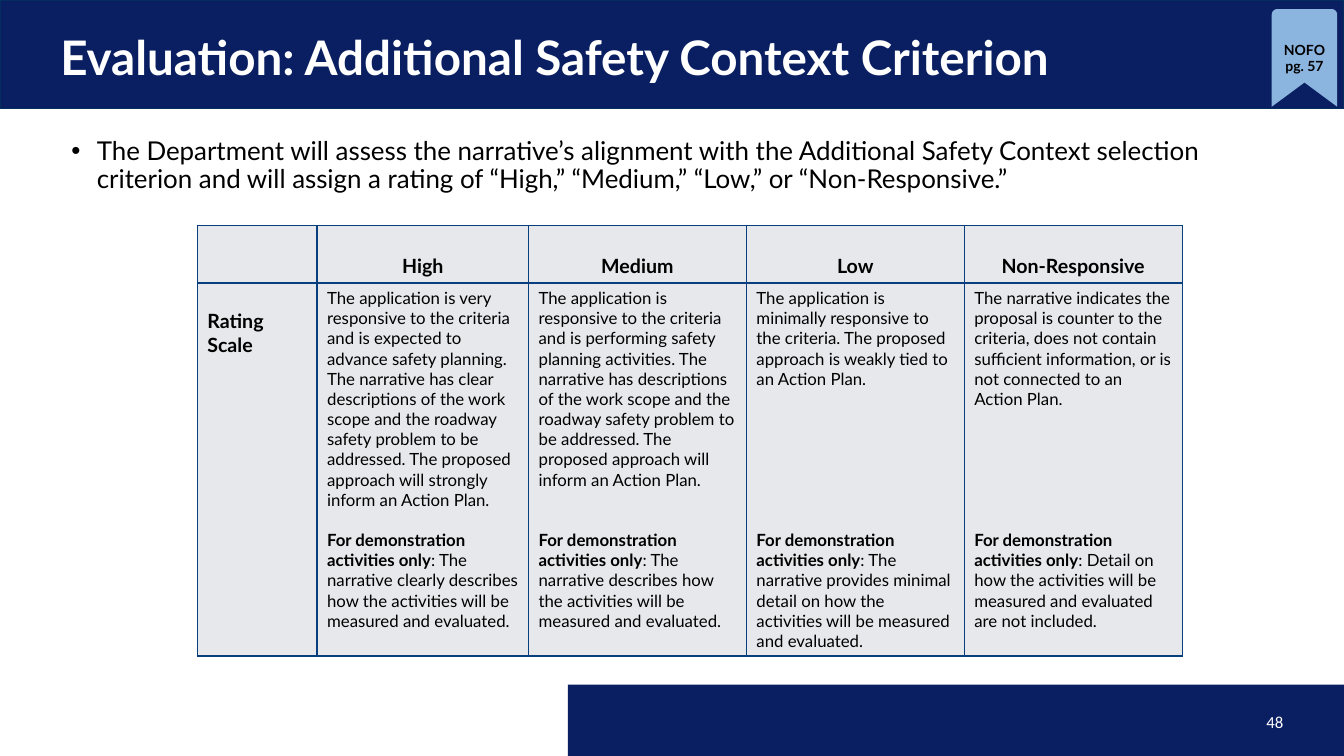
from math import cos, pi, sin

from lxml import etree
from pptx import Presentation
from pptx.dml.color import RGBColor
from pptx.enum.shapes import MSO_SHAPE
from pptx.enum.text import MSO_ANCHOR, PP_ALIGN
from pptx.oxml.ns import qn
from pptx.util import Cm, Pt

RECTANGLE = MSO_SHAPE.RECTANGLE
TOP, MIDDLE, BOTTOM = MSO_ANCHOR.TOP, MSO_ANCHOR.MIDDLE, MSO_ANCHOR.BOTTOM
LEFT, CENTER, RIGHT = PP_ALIGN.LEFT, PP_ALIGN.CENTER, PP_ALIGN.RIGHT

THEME = {
    "navy": RGBColor(0x0A, 0x1F, 0x61),
    "band_line": RGBColor(0x04, 0x2E, 0x5D),
    "ribbon": RGBColor(0x8B, 0xB4, 0xDF),
    "cell": RGBColor(0xE7, 0xE8, 0xEC),
    "border": "063E7E",
    "title": {"name": "Lato", "size": Pt(34), "bold": True},
    "lead": {"name": "Lato", "size": Pt(18.5), "bold": False},
    "heading": {"name": "Lato", "size": Pt(14), "bold": True},
    "body": {"name": "Lato", "size": Pt(12), "bold": False},
    "strong": {"name": "Lato", "size": Pt(12), "bold": True},
    "tag": {"name": "Lato", "size": Pt(10), "bold": True},
    "number": {"name": "Calibri", "size": Pt(12), "bold": False},
    "white": RGBColor(0xFF, 0xFF, 0xFF),
    "black": RGBColor(0, 0, 0),
}
BODY_LINE = 14.4  # points per line of table text


def add_run(paragraph, text, style, color="black"):
    run = paragraph.add_run()
    run.text = text
    for attribute, value in THEME[style].items():
        setattr(run.font, attribute, value)
    run.font.color.rgb = THEME[color]


presentation = Presentation()
presentation.slide_width, presentation.slide_height = Cm(33.87), Cm(19.05)
slide = presentation.slides.add_slide(presentation.slide_layouts[6])

# Navy bands
header_band = slide.shapes.add_shape(RECTANGLE, 0, 0, Cm(33.87), Cm(2.74))
footer_band = slide.shapes.add_shape(RECTANGLE, Cm(14.31), Cm(17.25), Cm(19.56), Cm(1.8))
for band in (header_band, footer_band):
    band.shadow.inherit = False
    band.fill.solid()
    band.fill.fore_color.rgb = THEME["navy"]
    band.line.fill.background()
header_band.line.color.rgb = THEME["band_line"]
header_band.line.width = Pt(1)

# Title, lead sentence and page number
TEXTS = [
    ("Evaluation: Additional Safety Context Criterion", (1.27, 0, 31.32, 2.74),
     "title", "white", MIDDLE, {"alignment": LEFT, "line_spacing": 1.08}),
    ("The Department will assess the narrative’s alignment with the Additional Safety "
     "Context selection criterion and will assign a rating of “High,” “Medium,” “Low,” "
     "or “Non-Responsive.”", (1.55, 3.38, 30.78, 1.7),
     "lead", "black", TOP, {"alignment": LEFT, "line_spacing": 0.88}),
    ("48", (24.97, 17.88, 7.62, 0.64),
     "number", "white", MIDDLE, {"alignment": RIGHT}),
]
for text, place, style, color, anchor, paragraph_format in TEXTS:
    frame = slide.shapes.add_textbox(*map(Cm, place)).text_frame
    frame.word_wrap = True
    frame.vertical_anchor = anchor
    paragraph = frame.paragraphs[0]
    for attribute, value in paragraph_format.items():
        setattr(paragraph, attribute, value)
    if style == "lead":
        properties = paragraph._p.get_or_add_pPr()
        properties.set("marL", str(Cm(0.64)))
        properties.set("indent", str(Cm(-0.64)))
        etree.SubElement(properties, qn("a:buFont"), typeface="Arial")
        etree.SubElement(properties, qn("a:buChar"), char="•")
    add_run(paragraph, text, style, color)

# Rating table: heading, text, lines of gap, text for demonstration activities
RATINGS = [
    ("High",
     "The application is very responsive to the criteria and is expected to advance safety "
     "planning. The narrative has clear descriptions of the work scope and the roadway safety "
     "problem to be addressed. The proposed approach will strongly inform an Action Plan.",
     1, "The narrative clearly describes how the activities will be measured and evaluated."),
    ("Medium",
     "The application is responsive to the criteria and is performing safety planning "
     "activities. The narrative has descriptions of the work scope and the roadway safety "
     "problem to be addressed. The proposed approach will inform an Action Plan.",
     2, "The narrative describes how the activities will be measured and evaluated."),
    ("Low",
     "The application is minimally responsive to the criteria. The proposed approach is "
     "weakly tied to an Action Plan.",
     7, "The narrative provides minimal detail on how the activities will be measured and "
     "evaluated."),
    ("Non-Responsive",
     "The narrative indicates the proposal is counter to the criteria, does not contain "
     "sufficient information, or is not connected to an Action Plan.",
     6, "Detail on how the activities will be measured and evaluated are not included."),
]
table = slide.shapes.add_table(2, 5, Cm(4.97), Cm(5.69), Cm(24.82), Cm(10.84)).table
for column, width in zip(table.columns, (3.02, 5.33, 5.49, 5.49, 5.49)):
    column.width = Cm(width)
for row, height in zip(table.rows, (1.44, 9.4)):
    row.height = Cm(height)

for cell in table.iter_cells():
    properties = cell._tc.get_or_add_tcPr()
    for side in ("a:lnL", "a:lnR", "a:lnT", "a:lnB"):
        border = etree.SubElement(properties, qn(side), w=str(Pt(1)))
        fill = etree.SubElement(border, qn("a:solidFill"))
        etree.SubElement(fill, qn("a:srgbClr"), val=THEME["border"])
    cell.fill.solid()
    cell.fill.fore_color.rgb = THEME["cell"]

scale_cell = table.cell(1, 0)
scale_cell.margin_top = Cm(0.67)
add_run(scale_cell.text_frame.paragraphs[0], "Rating Scale", "heading")

for index, (heading, description, gap_lines, demonstration) in enumerate(RATINGS, start=1):
    heading_cell = table.cell(0, index)
    heading_cell.vertical_anchor = BOTTOM
    paragraph = heading_cell.text_frame.paragraphs[0]
    paragraph.alignment = CENTER
    add_run(paragraph, heading, "heading")

    frame = table.cell(1, index).text_frame
    add_run(frame.paragraphs[0], description, "body")
    paragraph = frame.add_paragraph()
    paragraph.space_before = Pt(gap_lines * BODY_LINE)
    add_run(paragraph, "For demonstration activities only", "strong")
    add_run(paragraph, f": {demonstration}", "body")

# Page ribbon with rounded top corners and a notched foot
left, top, right, bottom, radius = 32.05, 0.23, 33.7, 2.69, 0.14
outline = []
for center_x, start_angle in ((left + radius, pi), (right - radius, 1.5 * pi)):
    for step in range(7):
        angle = start_angle + step * pi / 12
        outline.append((center_x + radius * cos(angle), top + radius + radius * sin(angle)))
outline += [(right, bottom), ((left + right) / 2, 2.08)]
builder = slide.shapes.build_freeform(Cm(left), Cm(bottom))
builder.add_line_segments([(Cm(x), Cm(y)) for x, y in outline], close=True)
ribbon = builder.convert_to_shape()
ribbon.shadow.inherit = False
ribbon.fill.solid()
ribbon.fill.fore_color.rgb = THEME["ribbon"]
ribbon.line.fill.background()
frame = ribbon.text_frame
frame.word_wrap = True
frame.vertical_anchor = MIDDLE
frame.paragraphs[0].alignment = CENTER
add_run(frame.paragraphs[0], "NOFO pg. 57", "tag")

presentation.save("out.pptx")
